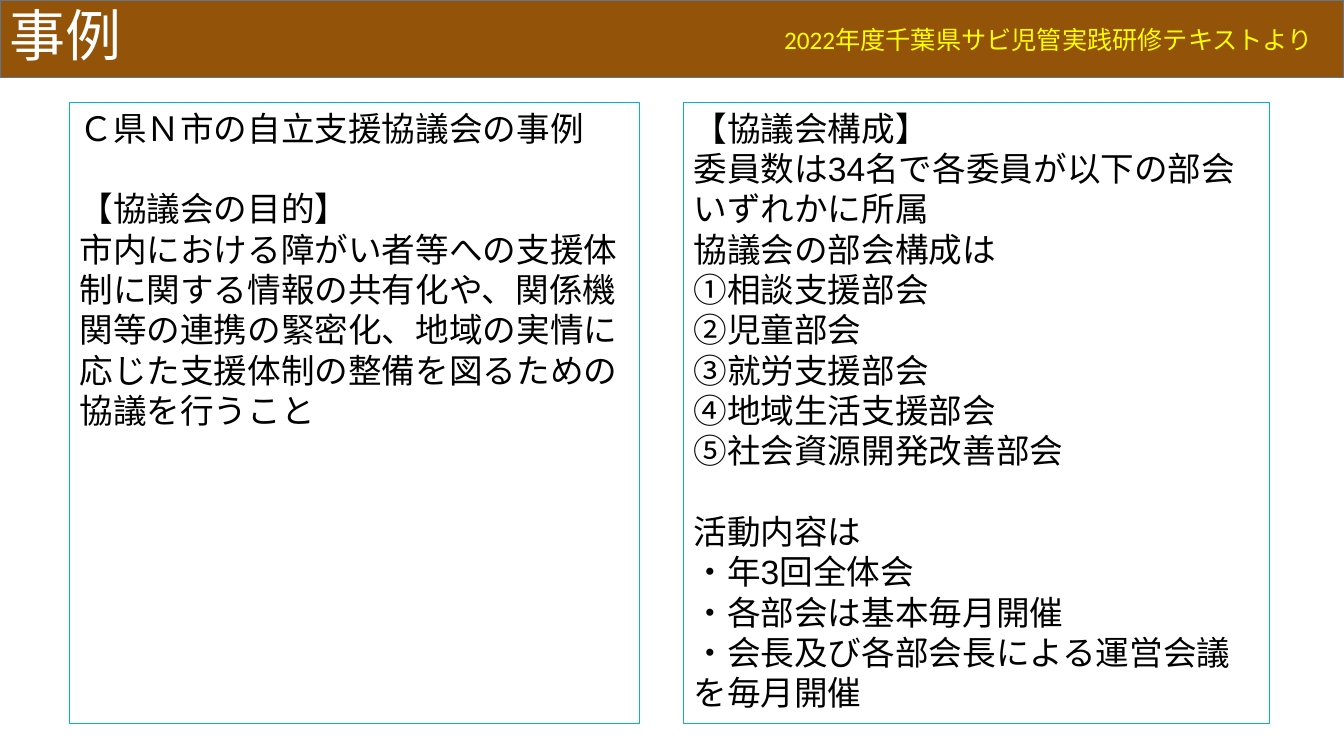
from pptx import Presentation
from pptx.dml.color import RGBColor as RGB
from pptx.enum.shapes import MSO_SHAPE as Shape
from pptx.enum.text import MSO_ANCHOR as Anchor, PP_ALIGN as Align
from pptx.util import Inches, Pt

BROWN, SLATE, BLUE = "93540A", "5F7590", "00B0F0"
WHITE, BLACK, YELLOW = "FFFFFF", "000000", "FFFF00"
TOP, TALL = 1.02, 6.16
GAP = Pt(28.8)  # one line of body text

AIMS = [
    ["Ｃ県Ｎ市の自立支援協議会の事例"],
    ["【協議会の目的】",
     "市内における障がい者等への支援体制に関する情報の共有化や、関係機関等の連携の緊密化、"
     "地域の実情に応じた支援体制の整備を図るための協議を行うこと"],
]
GROUPS = [
    ["【協議会構成】",
     "委員数は34名で各委員が以下の部会いずれかに所属",
     "協議会の部会構成は",
     "①相談支援部会",
     "②児童部会",
     "③就労支援部会",
     "④地域生活支援部会",
     "⑤社会資源開発改善部会"],
    ["活動内容は",
     "・年3回全体会",
     "・各部会は基本毎月開催",
     "・会長及び各部会長による運営会議を毎月開催"],
]


def color(code):
    return RGB.from_string(code)


def assign(item, values):
    for key, value in values.items():
        setattr(item, key, value)


class Page:
    title = {"name": "Calibri", "size": Pt(40)}
    note = {"name": "Calibri", "size": Pt(18)}
    body = {"name": "Arial", "size": Pt(24)}

    def __init__(self, deck):
        self.slide = deck.slides.add_slide(deck.slide_layouts[6])

    def label(self, shape, blocks, font, ink, anchor=Anchor.TOP, **form):
        """Fill a shape with blocks of paragraphs, one line apart."""
        frame = shape.text_frame
        assign(frame, {"word_wrap": True, "vertical_anchor": anchor})
        para = None
        for block in blocks:
            for index, text in enumerate(block):
                first = para is None
                para = frame.paragraphs[0] if first else frame.add_paragraph()
                assign(para, {"alignment": Align.LEFT, **form})
                if index == 0 and not first:
                    para.space_before = GAP
                run = para.add_run()
                run.text = text
                assign(run.font, font)
                run.font.color.rgb = color(ink)

    def rect(self, left, top, width, height, fill, line):
        shape = self.slide.shapes.add_shape(
            Shape.RECTANGLE, *map(Inches, (left, top, width, height)))
        shape.shadow.inherit = False
        shape.fill.solid()
        shape.fill.fore_color.rgb = color(fill)
        shape.line.color.rgb = color(line)
        shape.line.width = Pt(1)
        return shape

    def banner(self, text):
        bar = self.rect(0, 0, 13.33, 0.77, BROWN, SLATE)
        self.label(bar, [[text]], self.title, WHITE, Anchor.MIDDLE,
                   line_spacing=0.9)

    def panel(self, left, width, blocks):
        box = self.rect(left, TOP, width, TALL, WHITE, BLUE)
        self.label(box, blocks, self.body, BLACK)

    def source(self, text):
        box = self.slide.shapes.add_textbox(
            *map(Inches, (7.26, 0.19, 5.86, 0.4)))
        self.label(box, [[text]], self.note, YELLOW, alignment=Align.RIGHT)


def main():
    deck = Presentation()
    assign(deck, {"slide_width": Inches(13.33), "slide_height": Inches(7.5)})
    page = Page(deck)
    page.banner("事例")
    page.panel(0.69, 5.65, AIMS)
    page.panel(6.78, 5.81, GROUPS)
    page.source("2022年度千葉県サビ児管実践研修テキストより")
    deck.save("out.pptx")


if __name__ == "__main__":
    main()
